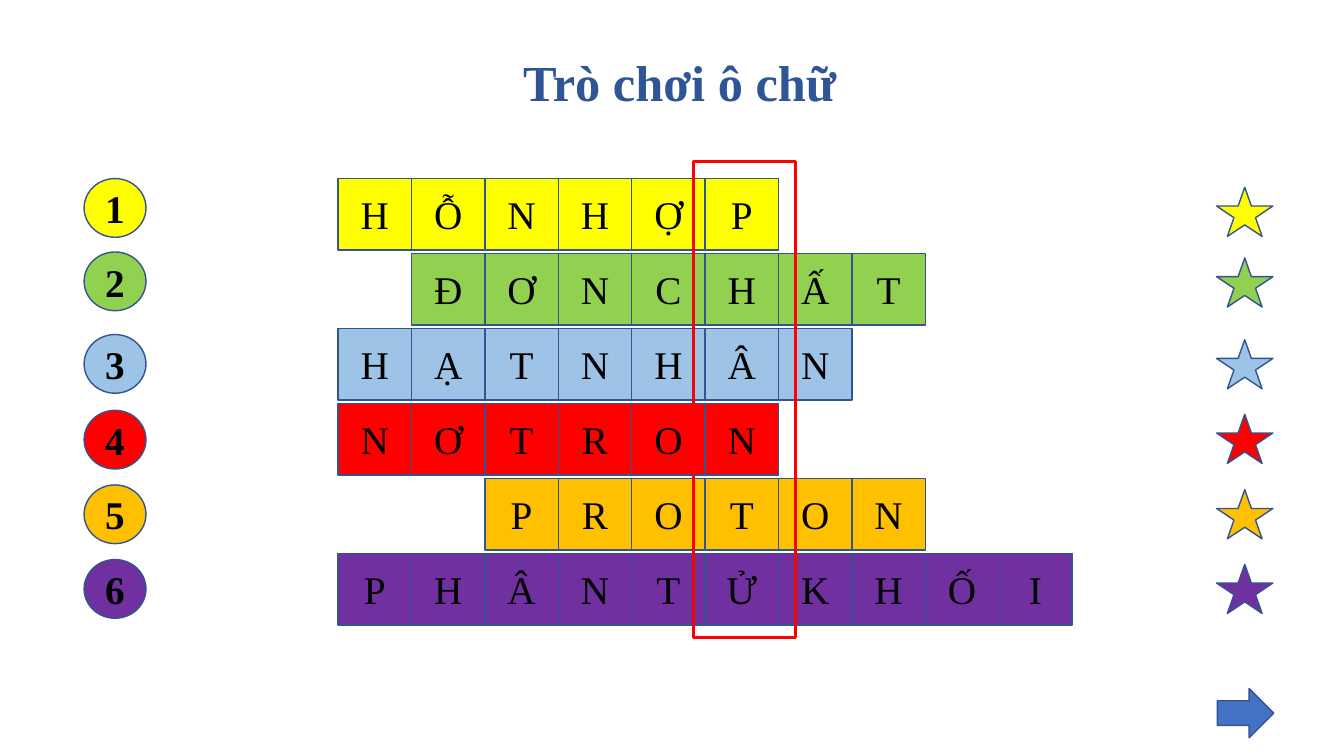
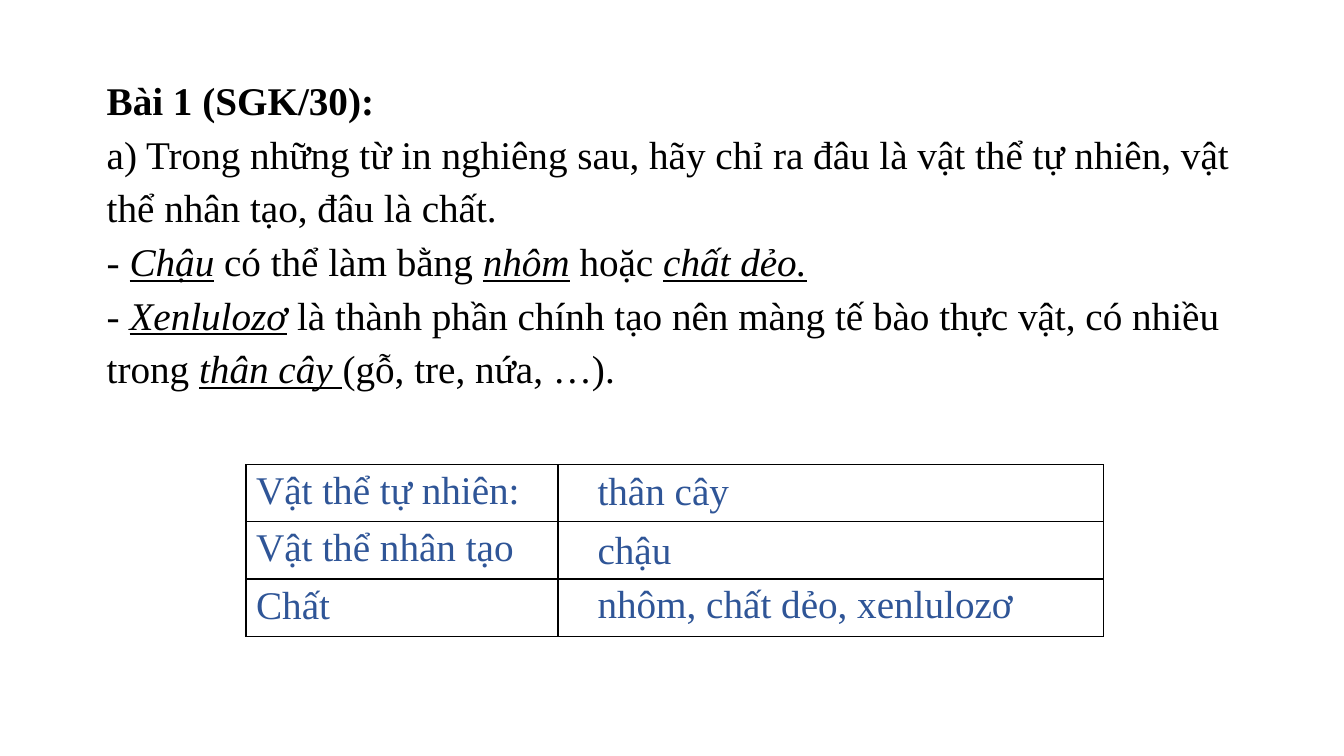
from pptx import Presentation
from pptx.dml.color import RGBColor
from pptx.enum import shapes, text
from pptx.oxml import ns, parse_xml
from pptx.util import Cm, Pt

FONT = "Times New Roman"
BLACK = RGBColor(0x00, 0x00, 0x00)
NAVY = RGBColor(0x2F, 0x55, 0x97)
EDGE = RGBColor(0x32, 0x54, 0x91)
BLUE = RGBColor(0x44, 0x72, 0xC4)
YELLOW = RGBColor(0xFF, 0xFF, 0x00)
GREEN = RGBColor(0x92, 0xD0, 0x50)
SKY = RGBColor(0x9D, 0xC3, 0xE6)
RED = RGBColor(0xFF, 0x00, 0x00)
GOLD = RGBColor(0xFF, 0xC0, 0x00)
PURPLE = RGBColor(0x70, 0x30, 0xA0)
KIND = shapes.MSO_SHAPE


def write(frame, *lines, size=28, color=BLACK, bold=False, align="LEFT", anchor="TOP", space=None):
    frame.word_wrap = True
    frame.vertical_anchor = getattr(text.MSO_ANCHOR, anchor)
    for i, line in enumerate(lines):
        para = frame.add_paragraph() if i else frame.paragraphs[0]
        para.alignment = getattr(text.PP_ALIGN, align)
        if space:
            para.line_spacing = space
        for part in [line] if isinstance(line, str) else line:
            words, style = (part, "") if isinstance(part, str) else part
            run = para.add_run()
            run.text = words
            font = run.font
            font.name, font.size, font.color.rgb = FONT, Pt(size), color
            font.bold = bold or "b" in style
            font.italic = "i" in style
            font.underline = "u" in style


def draw(slide, kind, box, fill=None, line=EDGE, width=1):
    shape = slide.shapes.add_shape(kind, *map(Cm, box))
    shape.shadow.inherit = False
    if fill is None:
        shape.fill.background()
    else:
        shape.fill.solid()
        shape.fill.fore_color.rgb = fill
    shape.line.color.rgb = line
    shape.line.width = Pt(width)
    return shape


deck = Presentation()
deck.slide_width, deck.slide_height = Cm(33.87), Cm(19.05)

game = deck.slides.add_slide(deck.slide_layouts[5])
title = game.shapes.title
title.left, title.top, title.width, title.height = Cm(9.6), Cm(1.17), Cm(15.06), Cm(1.8)
title.text_frame.auto_size = text.MSO_AUTO_SIZE.NONE
write(title.text_frame, "Trò chơi ô chữ", size=36, color=NAVY, bold=True, align="CENTER")

LEFT, TOP, WIDE, HIGH, STEP = 8.52, 4.5, 1.85, 1.8, 1.89
rows = [
    ("HỖNHỢP", 0, YELLOW, 4.5, 4.72),
    ("ĐƠNCHẤT", 1, GREEN, 6.35, 6.5),
    ("HẠTNHÂN", 0, SKY, 8.43, 8.56),
    ("NƠTRON", 0, RED, 10.34, 10.44),
    ("PROTON", 2, GOLD, 12.22, 12.34),
    ("PHÂNTỬKHỐI", 0, PURPLE, 14.1, 14.22),
]
for row, (word, skip, hue, disc, star) in enumerate(rows):
    for col, char in enumerate(word, skip):
        tile = draw(game, KIND.RECTANGLE, (LEFT + col * WIDE, TOP + row * STEP, WIDE, HIGH), hue)
        write(tile.text_frame, char, align="CENTER", anchor="MIDDLE")
    badge = draw(game, KIND.OVAL, (2.12, disc, 1.56, 1.48), hue)
    write(badge.text_frame, str(row + 1), bold=True, align="CENTER", anchor="MIDDLE")
    draw(game, KIND.STAR_5_POINT, (30.66, star, 1.42, 1.24), hue)
draw(game, KIND.RECTANGLE, (17.48, 4.06, 2.57, 12.01), line=RED, width=2.25)
draw(game, KIND.RIGHT_ARROW, (30.68, 17.35, 1.42, 1.24), BLUE)

task = deck.slides.add_slide(deck.slide_layouts[6])
body = task.shapes.add_textbox(Cm(2.44), Cm(1.63), Cm(29.21), Cm(8.33))
write(
    body.text_frame,
    [("Bài 1 (SGK/30):", "b")],
    "a) Trong những từ in nghiêng sau, hãy chỉ ra đâu là vật thể tự nhiên, "
    "vật thể nhân tạo, đâu là chất.",
    [("- ", "i"), ("Chậu", "iu"), " có thể làm bằng ", ("nhôm", "iu"), " hoặc ",
     ("chất dẻo.", "iu")],
    [("- ", "i"), ("Xenlulozơ", "iu"),
     " là thành phần chính tạo nên màng tế bào thực vật, có nhiều trong ",
     ("thân cây ", "iu"), "(gỗ, tre, nứa, …)."],
    space=1.14,
)

sorts = [
    ("Vật thể tự nhiên:", "thân cây", 11.63, 7.44),
    ("Vật thể nhân tạo", "chậu", 13.11, 7.44),
    ("Chất", "nhôm, chất dẻo, xenlulozơ", 14.48, 12.5),
]
table = task.shapes.add_table(3, 2, Cm(6.2), Cm(11.71), Cm(21.6), Cm(4.32)).table
table.first_row = table.horz_banding = False
table.columns[0].width, table.columns[1].width = Cm(7.86), Cm(13.74)
for row, (name, reply, top, width) in enumerate(sorts):
    table.rows[row].height = Cm(1.44)
    write(table.cell(row, 0).text_frame, name, color=NAVY)
    note = task.shapes.add_textbox(Cm(14.81), Cm(top), Cm(width), Cm(1.45))
    write(note.text_frame, reply, color=NAVY)
for cell in table.iter_cells():
    cell.fill.background()
    for i, side in enumerate("LRTB"):
        edge = parse_xml(
            f'<a:ln{side} {ns.nsdecls("a")} w="12700"><a:solidFill>'
            f'<a:srgbClr val="{BLACK}"/></a:solidFill></a:ln{side}>'
        )
        cell._tc.get_or_add_tcPr().insert(i, edge)

deck.save("out.pptx")
